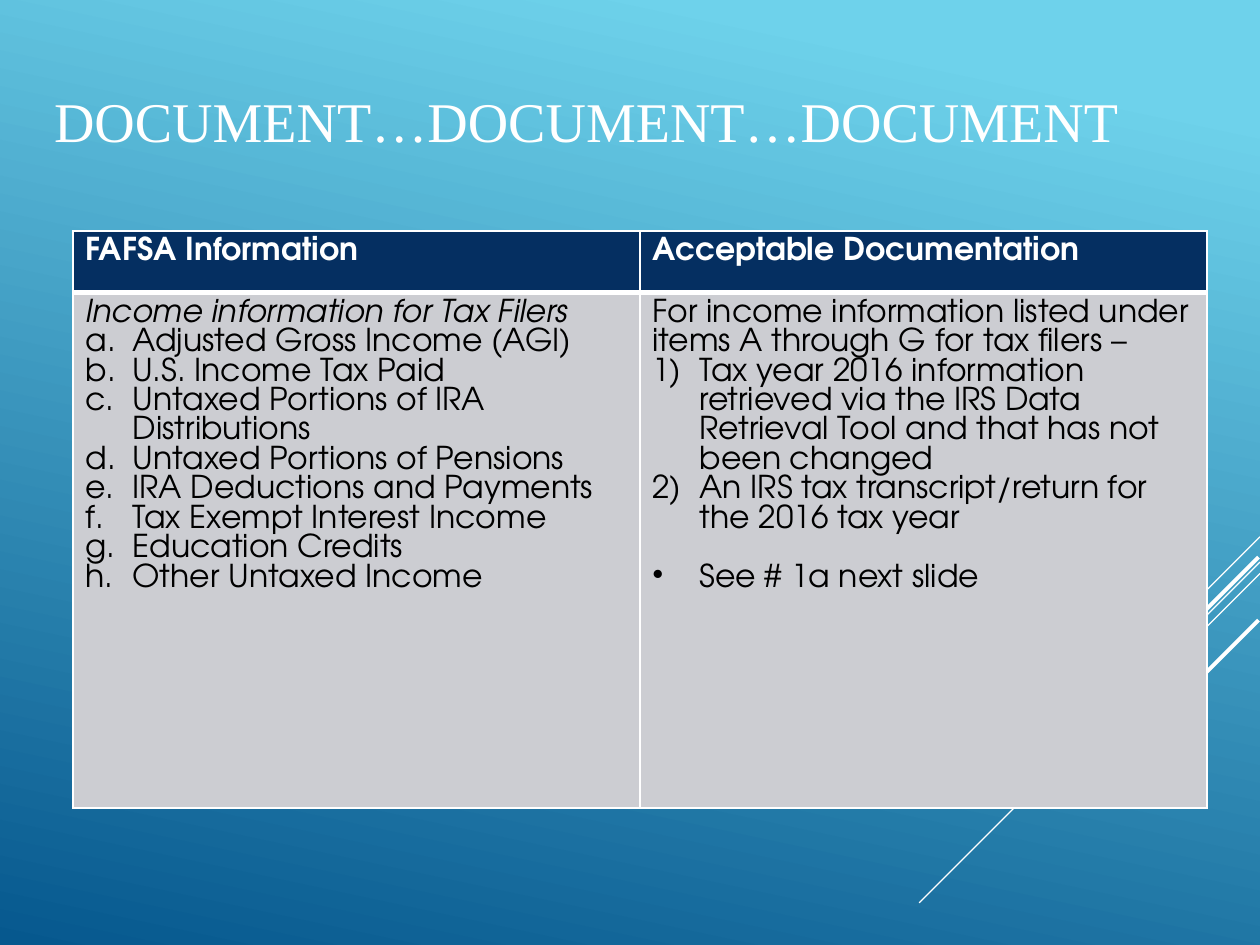
from dataclasses import dataclass

from lxml.etree import SubElement
from pptx import Presentation
from pptx.dml.color import RGBColor
from pptx.enum.shapes import MSO_CONNECTOR
from pptx.enum.text import MSO_ANCHOR
from pptx.oxml.ns import qn
from pptx.util import Cm, Pt

WHITE, BLACK, NAVY, GREY = "FFFFFF", "000000", "052F61", "CCCDD2"
TITLE_FONT, TABLE_FONT = "Times New Roman", "TeX Gyre Adventor"
LINE_PITCH = Pt(16.8)
HANGING_INDENT = Cm(0.95)
LETTERED = ("buAutoNum", {"type": "alphaLcPeriod"})
NUMBERED = ("buAutoNum", {"type": "arabicParenR"})
DOTTED = ("buChar", {"char": "•"})


@dataclass(frozen=True)
class Ray:
    right: float
    top: float
    span: float
    weight: float


@dataclass(frozen=True)
class Item:
    text: str
    bullet: tuple | None = None
    bold: bool = False
    italic: bool = False
    gap_before: int = 0


@dataclass(frozen=True)
class Row:
    height: float
    fill: str
    ink: str
    borders: dict
    cells: tuple


RAYS = (
    Ray(25.4, 10.82, 2.11, 0.75),
    Ray(25.4, 11.33, 6.87, 0.75),
    Ray(25.4, 11.56, 4.37, 0.75),
    Ray(25.37, 11.23, 3.99, 2.25),
    Ray(25.37, 12.5, 2.9, 2.25),
)

FAFSA_ITEMS = (
    "Adjusted Gross Income (AGI)",
    "U.S. Income Tax Paid",
    "Untaxed Portions of IRA Distributions",
    "Untaxed Portions of Pensions",
    "IRA Deductions and Payments",
    "Tax Exempt Interest Income",
    "Education Credits",
    "Other Untaxed Income",
)

ROWS = (
    Row(1.24, NAVY, WHITE, {"L": 1, "R": 1, "T": 1, "B": 3}, (
        (Item("FAFSA Information", bold=True),),
        (Item("Acceptable Documentation", bold=True),),
    )),
    Row(10.39, GREY, BLACK, {"L": 1, "R": 1, "T": 3, "B": 1}, (
        (
            Item("Income information for Tax Filers", italic=True),
            *(Item(text, LETTERED) for text in FAFSA_ITEMS),
        ),
        (
            Item("For income information listed under items A through G for tax filers –"),
            Item("Tax year 2016 information retrieved via the IRS Data Retrieval Tool "
                 "and that has not been changed", NUMBERED),
            Item("An IRS tax transcript/return for the 2016 tax year", NUMBERED),
            Item("See # 1a next slide", DOTTED, gap_before=LINE_PITCH),
        ),
    )),
)


def rgb(code: str) -> RGBColor:
    return RGBColor.from_string(code)


def paint_background(slide) -> None:
    fill = slide.background.fill
    fill.gradient()
    fill.gradient_angle = 360 - 102
    for stop, (position, code) in zip(fill.gradient_stops, ((0.1, "6ED2EB"), (1, "06588E"))):
        stop.position = position
        stop.color.rgb = rgb(code)


def draw_ray(slide, ray: Ray) -> None:
    line = slide.shapes.add_connector(
        MSO_CONNECTOR.STRAIGHT, Cm(ray.right), Cm(ray.top),
        Cm(ray.right - ray.span), Cm(ray.top + ray.span))
    line.line.color.rgb = rgb(WHITE)
    line.line.width = Pt(ray.weight)
    SubElement(line._element.spPr, qn("a:effectLst"))


def style_font(paragraph, name: str, size: float, ink: str) -> None:
    paragraph.font.name = name
    paragraph.font.size = Pt(size)
    paragraph.font.color.rgb = rgb(ink)


def draw_title(slide, text: str) -> None:
    title = slide.shapes.add_textbox(Cm(0.84), Cm(0.84), Cm(22.66), Cm(3.18))
    frame = title.text_frame
    frame.word_wrap = True
    frame.vertical_anchor = MSO_ANCHOR.MIDDLE
    frame.text = text
    style_font(frame.paragraphs[0], TITLE_FONT, 32, WHITE)


def write_item(paragraph, item: Item, ink: str) -> None:
    paragraph.text = item.text
    if item.bullet:
        properties = paragraph._p.get_or_add_pPr()
        properties.set("marL", str(HANGING_INDENT))
        properties.set("indent", str(-HANGING_INDENT))
        tag, attributes = item.bullet
        SubElement(properties, qn(f"a:{tag}"), attributes)
    paragraph.line_spacing = LINE_PITCH
    paragraph.space_before = item.gap_before
    style_font(paragraph, TABLE_FONT, 18, ink)
    paragraph.font.bold = item.bold
    paragraph.font.italic = item.italic


def draw_borders(cell, borders: dict) -> None:
    properties = cell._tc.get_or_add_tcPr()
    for side, weight in borders.items():
        border = SubElement(properties, qn(f"a:ln{side}"), {"w": str(Pt(weight))})
        SubElement(SubElement(border, qn("a:solidFill")), qn("a:srgbClr"), {"val": WHITE})


def fill_cell(cell, items: tuple, row: Row) -> None:
    draw_borders(cell, row.borders)
    cell.fill.solid()
    cell.fill.fore_color.rgb = rgb(row.fill)
    frame = cell.text_frame
    for index, item in enumerate(items):
        paragraph = frame.add_paragraph() if index else frame.paragraphs[0]
        write_item(paragraph, item, row.ink)


def draw_table(slide, rows: tuple) -> None:
    height = sum(row.height for row in rows)
    table = slide.shapes.add_table(
        len(rows), 2, Cm(1.47), Cm(4.66), Cm(22.86), Cm(height)).table
    for row_index, row in enumerate(rows):
        table.rows[row_index].height = Cm(row.height)
        for column_index, items in enumerate(row.cells):
            fill_cell(table.cell(row_index, column_index), items, row)


def main() -> None:
    presentation = Presentation()
    presentation.slide_width, presentation.slide_height = Cm(25.4), Cm(19.05)
    slide = presentation.slides.add_slide(presentation.slide_layouts[6])
    paint_background(slide)
    for ray in RAYS:
        draw_ray(slide, ray)
    draw_title(slide, "DOCUMENT…DOCUMENT…DOCUMENT")
    draw_table(slide, ROWS)
    presentation.save("out.pptx")


if __name__ == "__main__":
    main()
